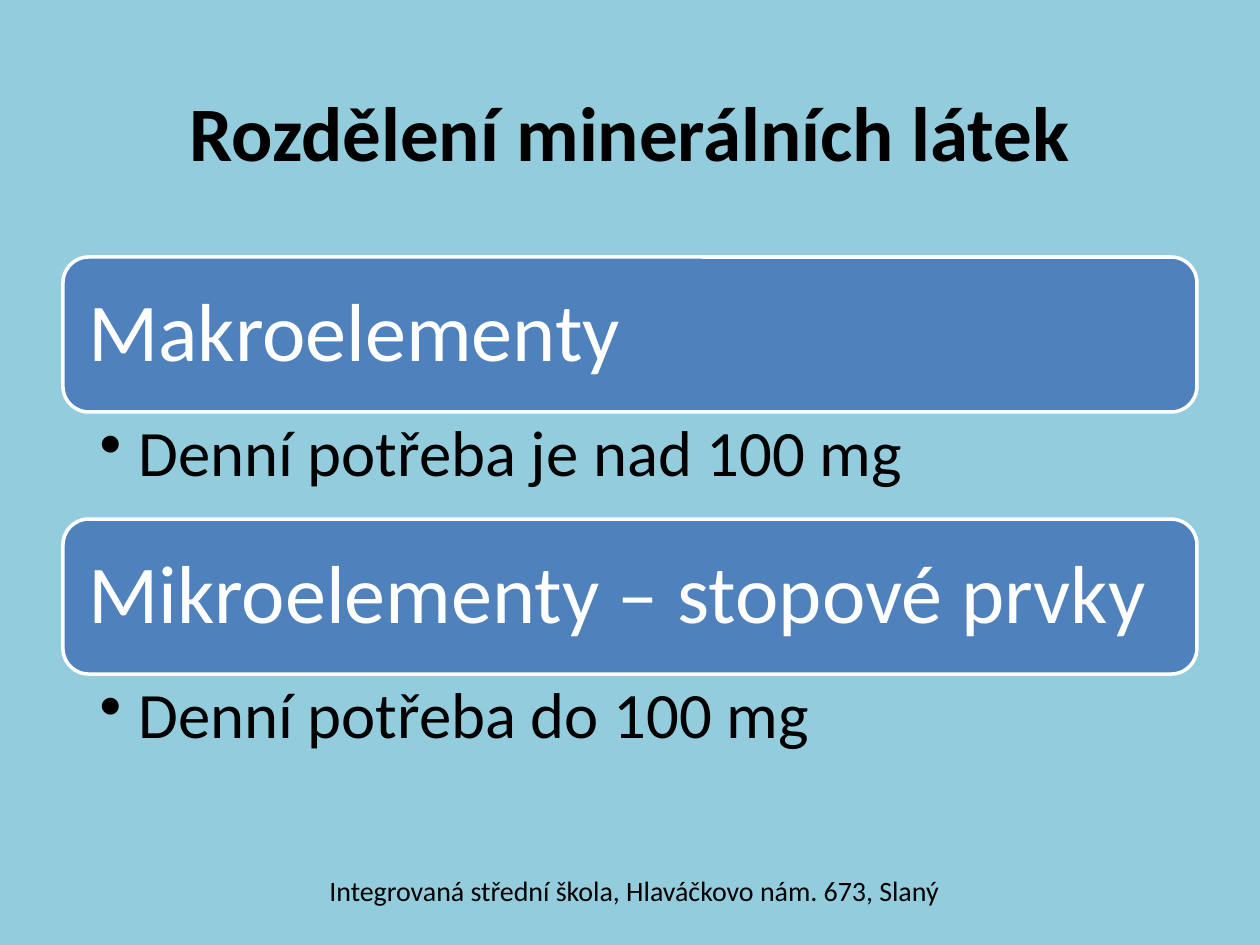
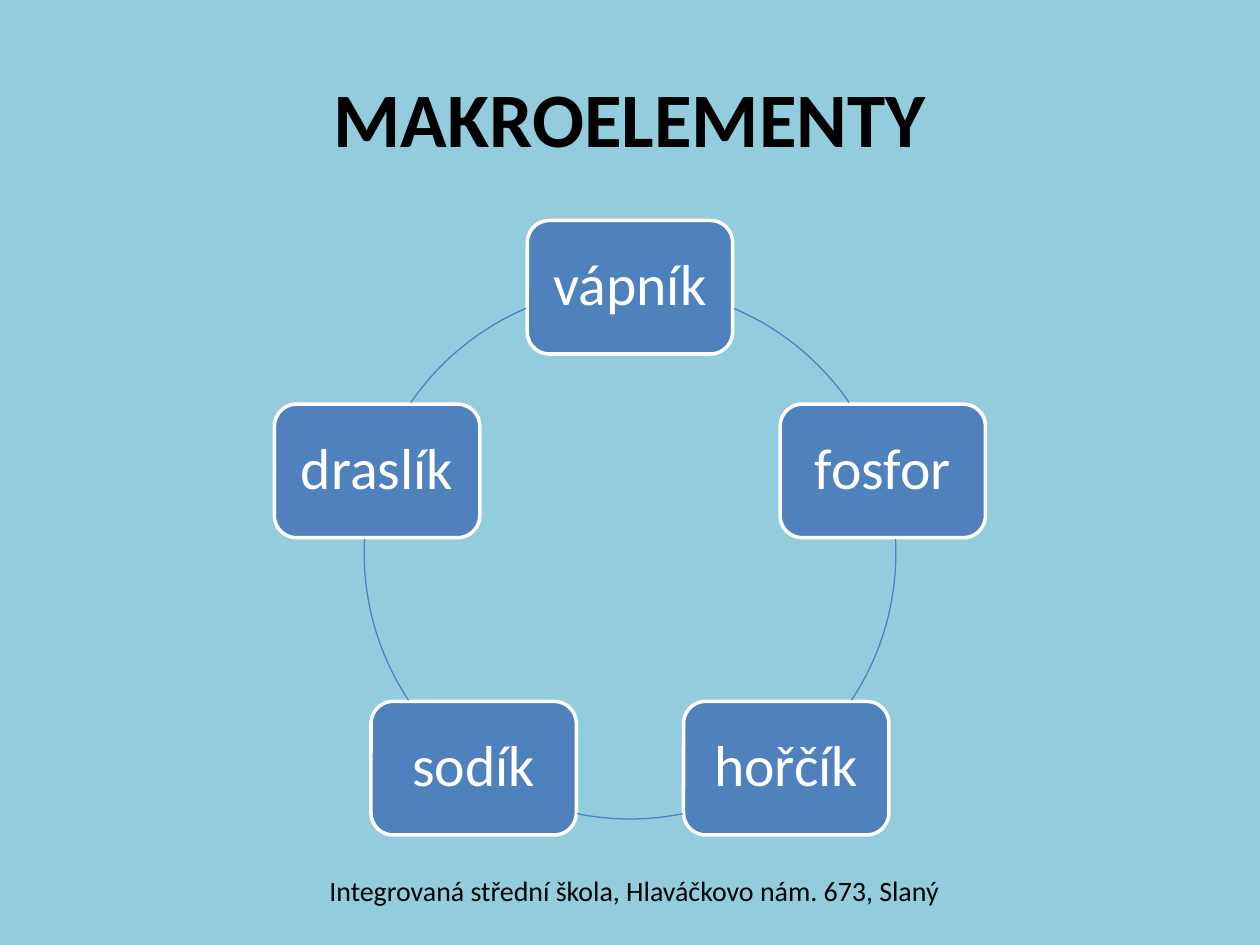
import math

from lxml import etree
from pptx import Presentation
from pptx import util as u
from pptx.dml.color import RGBColor
from pptx.enum import shapes, text
from pptx.oxml.ns import qn

COLORS = {"background": "93CDDD", "box": "4F81BD", "outline": "FFFFFF",
          "light": "FFFFFF", "dark": "000000"}
FONT = "Calibri"
FOOTER = "Integrovaná střední škola, Hlaváčkovo nám. 673, Slaný"
LEFT, CENTER = text.PP_ALIGN.LEFT, text.PP_ALIGN.CENTER
TOP, MIDDLE = text.MSO_ANCHOR.TOP, text.MSO_ANCHOR.MIDDLE


def write(shape, content, size, color="dark", bold=False, align=CENTER,
          anchor=MIDDLE, insets=(0.1, 0.05, 0.1, 0.05), spacing=1.0):
    """Set one styled paragraph; insets are left, top, right, bottom."""
    frame = shape.text_frame
    frame.word_wrap = True
    frame.vertical_anchor = anchor
    (frame.margin_left, frame.margin_top,
     frame.margin_right, frame.margin_bottom) = map(u.Inches, insets)
    paragraph = frame.paragraphs[0]
    paragraph.alignment = align
    paragraph.line_spacing = spacing
    run = paragraph.add_run()
    run.text = content
    run.font.name = FONT
    run.font.size = u.Pt(size)
    run.font.bold = bold
    run.font.color.rgb = RGBColor.from_string(COLORS[color])
    return paragraph


def add_box(slide, left, top, width, height):
    box = slide.shapes.add_shape(shapes.MSO_SHAPE.ROUNDED_RECTANGLE,
                                 *map(u.Inches, (left, top, width, height)))
    box.shadow.inherit = False
    box.fill.solid()
    box.fill.fore_color.rgb = RGBColor.from_string(COLORS["box"])
    box.line.color.rgb = RGBColor.from_string(COLORS["outline"])
    box.line.width = u.Pt(2)
    return box


presentation = Presentation()
presentation.slide_width = u.Inches(10)
presentation.slide_height = u.Inches(7.5)

# Background, title and footer of both slides
slides = []
for title, title_height in (("Rozdělení minerálních látek", 1.48),
                            ("MAKROELEMENTY", 1.25)):
    slide = presentation.slides.add_slide(presentation.slide_layouts[6])
    slide.background.fill.solid()
    slide.background.fill.fore_color.rgb = RGBColor.from_string(COLORS["background"])
    title_box = slide.shapes.add_textbox(u.Inches(0.5), u.Inches(0.3),
                                         u.Inches(9), u.Inches(title_height))
    write(title_box, title, 44, bold=True)
    footer_box = slide.shapes.add_textbox(u.Inches(2.32), u.Inches(6.93),
                                          u.Inches(5.43), u.Inches(0.4))
    write(footer_box, FOOTER, 16, anchor=TOP, insets=(0.1, 0, 0.1, 0))
    slides.append(slide)
groups_slide, ring_slide = slides

# Slide 1: two element groups, each with its daily need below
BAND_HEIGHT, NEED_HEIGHT = 1.23, 0.85
groups = [("Makroelementy", "Denní potřeba je nad 100 mg"),
          ("Mikroelementy – stopové prvky", "Denní potřeba do 100 mg")]
for index, (group, need) in enumerate(groups):
    top = 2.04 + index * (BAND_HEIGHT + NEED_HEIGHT)
    band = add_box(groups_slide, 0.5, top, 9, BAND_HEIGHT)
    write(band, group, 47, "light", align=LEFT,
          insets=(0.14, 0.14, 0.14, 0.14), spacing=0.9)
    need_box = groups_slide.shapes.add_textbox(
        u.Inches(0.5), u.Inches(top + BAND_HEIGHT), u.Inches(9), u.Inches(NEED_HEIGHT))
    paragraph = write(need_box, need, 37, align=LEFT, anchor=TOP,
                      insets=(0.29, 0.07, 0.37, 0.07), spacing=0.9)
    paragraph.level = 1
    properties = paragraph._p.get_or_add_pPr()
    properties.set("marL", str(u.Inches(0.31)))
    properties.set("indent", str(-u.Inches(0.31)))
    etree.SubElement(properties, qn("a:buChar")).set("char", "•")

# Slide 2: elements at equal angles on a ring, arcs in the gaps between them
CENTER_X, CENTER_Y, RADIUS = 5, 4.39, 2.11
NODE_WIDTH, NODE_HEIGHT = 1.63, 1.06
elements = ["vápník", "fosfor", "hořčík", "sodík", "draslík"]
for index, element in enumerate(elements):
    angle = math.radians(index * 360 / len(elements) - 90)
    node = add_box(ring_slide,
                   CENTER_X + RADIUS * math.cos(angle) - NODE_WIDTH / 2,
                   CENTER_Y + RADIUS * math.sin(angle) - NODE_HEIGHT / 2,
                   NODE_WIDTH, NODE_HEIGHT)
    write(node, element, 33, "light", insets=(0.09, 0.09, 0.09, 0.09), spacing=0.9)

# Clockwise from three o'clock, in degrees
ADJUSTMENT_PER_DEGREE = 0.6
for start, end in ((293, 325.5), (357, 33.6), (78.5, 101.5), (146.4, 183), (214.5, 247)):
    arc = ring_slide.shapes.add_shape(
        shapes.MSO_SHAPE.ARC, u.Inches(CENTER_X - RADIUS), u.Inches(CENTER_Y - RADIUS),
        u.Inches(2 * RADIUS), u.Inches(2 * RADIUS))
    arc.adjustments[0] = start * ADJUSTMENT_PER_DEGREE
    arc.adjustments[1] = end * ADJUSTMENT_PER_DEGREE
    arc.shadow.inherit = False
    arc.fill.background()
    arc.line.color.rgb = RGBColor.from_string(COLORS["box"])
    arc.line.width = u.Pt(0.75)

presentation.save("out.pptx")
